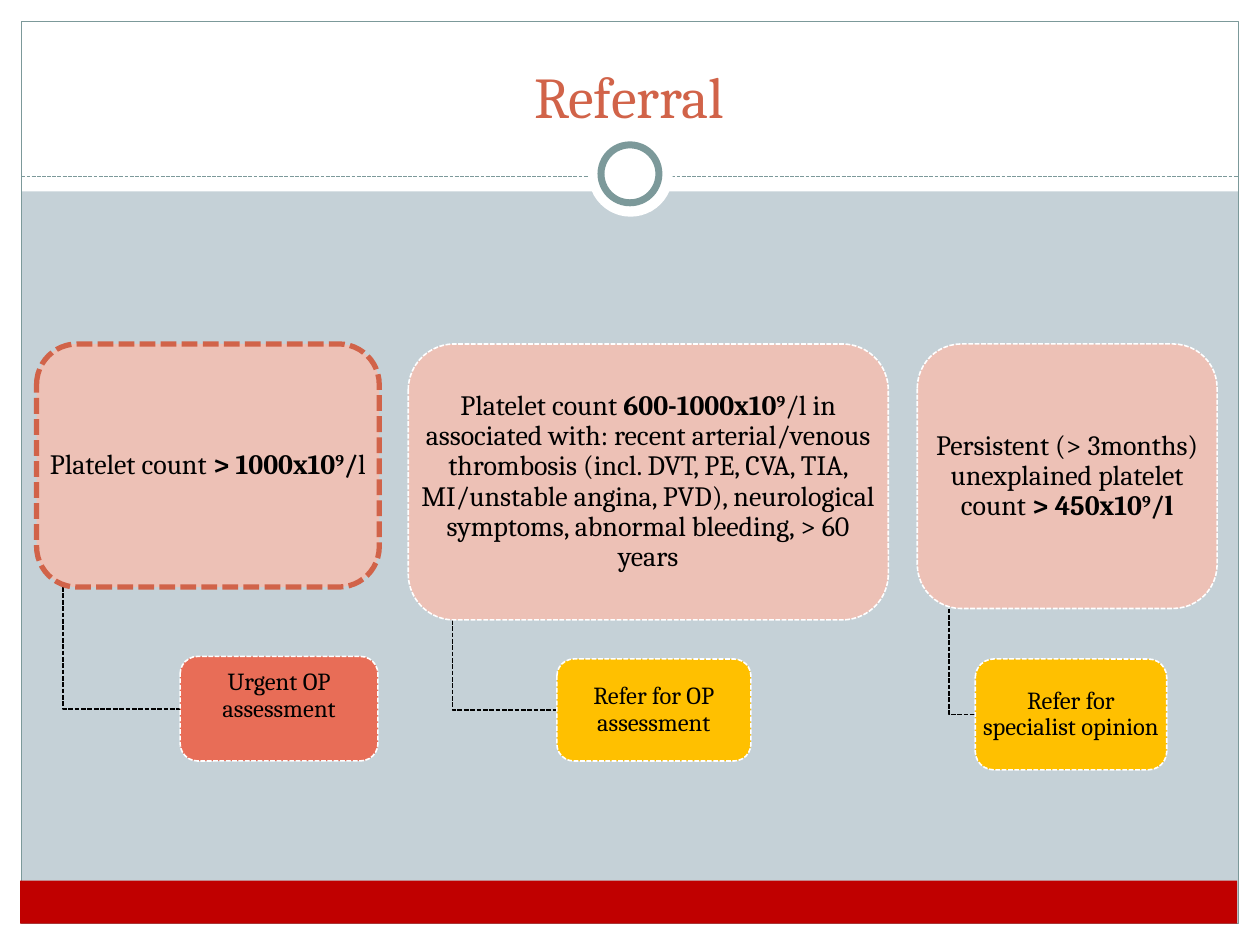
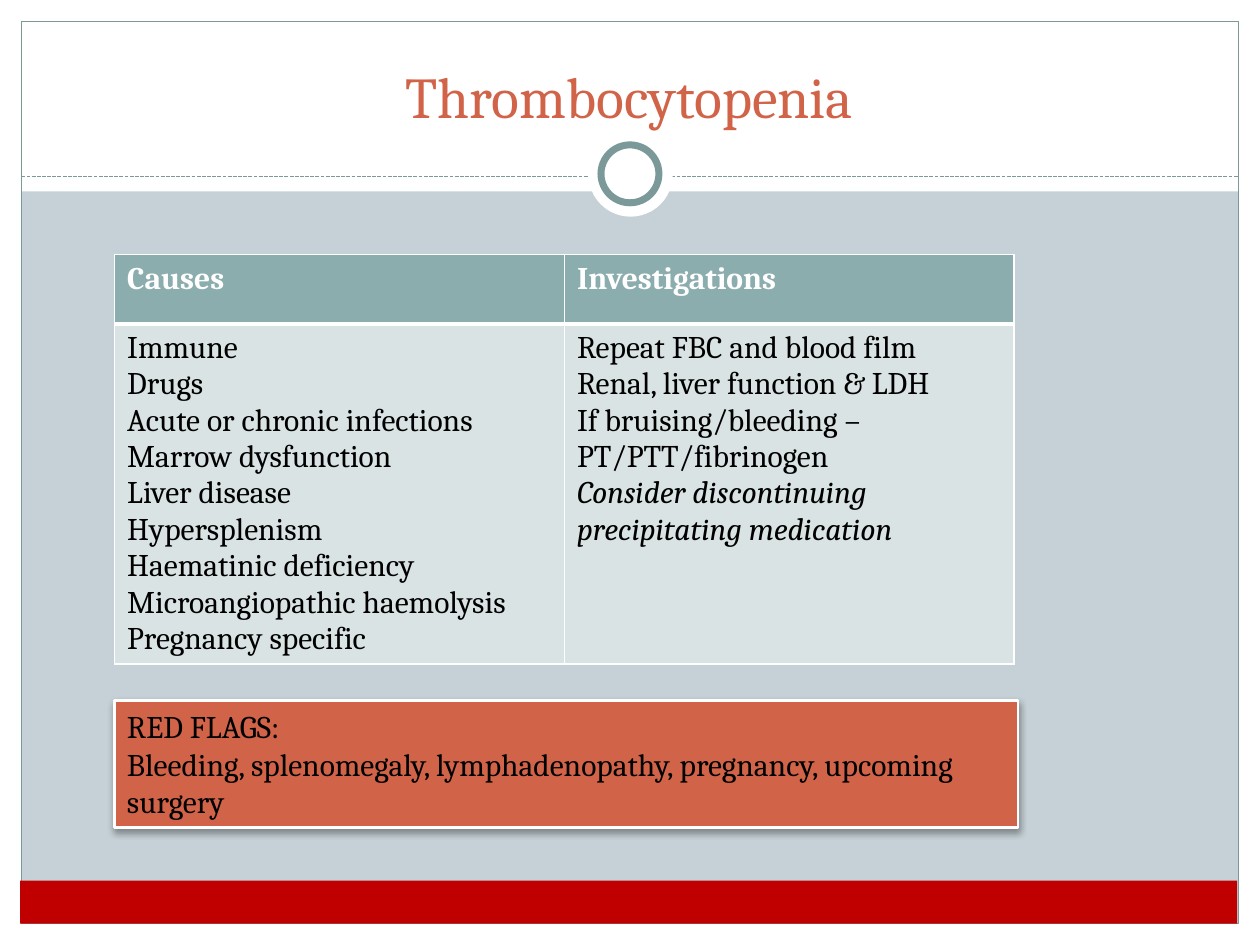
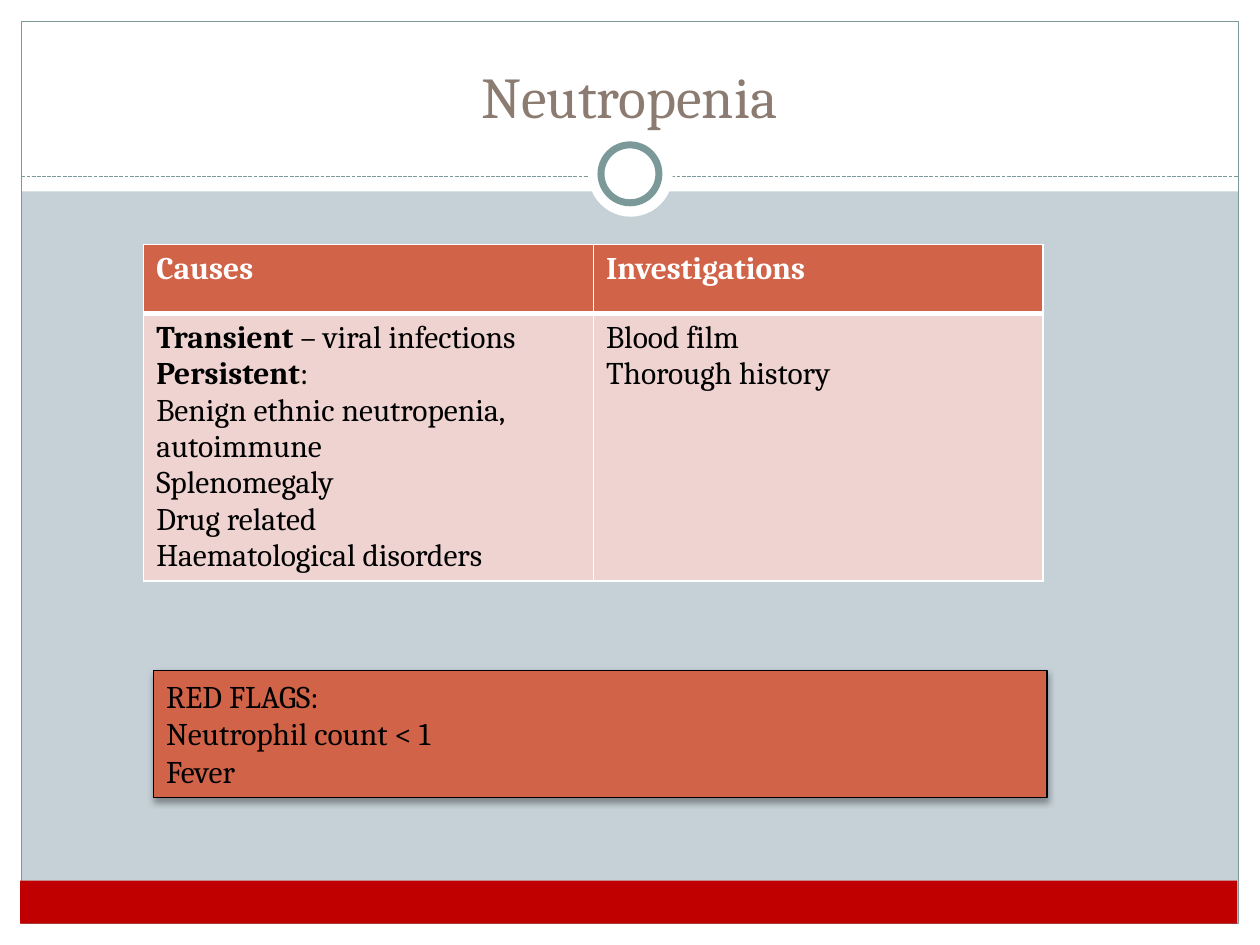
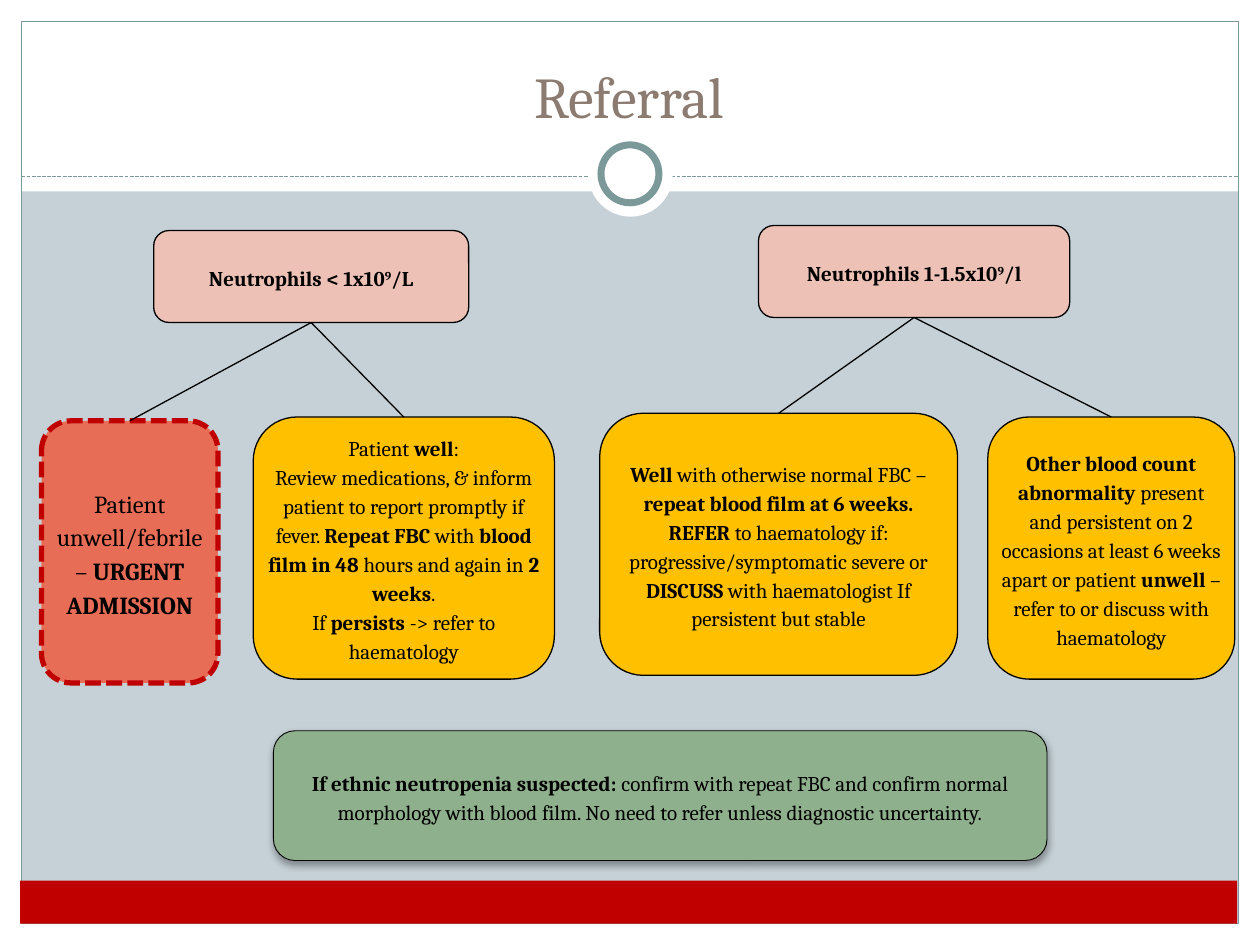
from lxml import etree
from pptx import Presentation
from pptx.dml.color import RGBColor
from pptx.enum import dml, shapes, text
from pptx.oxml import ns
from pptx.util import Inches, Pt

FONT = "Cambria"
WHITE = RGBColor(0xFF, 0xFF, 0xFF)
BLACK = RGBColor(0, 0, 0)
BACKDROP = RGBColor(0xC5, 0xD1, 0xD7)
TEAL = RGBColor(0x7C, 0x99, 0x9A)
FOOTER_RED = RGBColor(0xC0, 0, 0)
ORANGE = RGBColor(0xD1, 0x63, 0x49)
BROWN = RGBColor(0x8C, 0x7B, 0x70)
PINK = RGBColor(0xED, 0xC1, 0xB6)
CORAL = RGBColor(0xE8, 0x6D, 0x57)
AMBER = RGBColor(0xFF, 0xC0, 0)
GREEN = RGBColor(0x8F, 0xB0, 0x8C)
TABLE_TEAL = RGBColor(0x8C, 0xAD, 0xAE)
PALE_TEAL = RGBColor(0xDA, 0xE3, 0xE3)
PALE_PINK = RGBColor(0xEE, 0xD3, 0xD0)

RECT = shapes.MSO_SHAPE.RECTANGLE
ROUNDED = shapes.MSO_SHAPE.ROUNDED_RECTANGLE
OVAL = shapes.MSO_SHAPE.OVAL
LEFT = text.PP_ALIGN.LEFT
CENTER = text.PP_ALIGN.CENTER
TOP = text.MSO_ANCHOR.TOP
MIDDLE = text.MSO_ANCHOR.MIDDLE
BOTTOM = text.MSO_ANCHOR.BOTTOM


def add_span(para, content, size, color, bold=False, italic=False, raised=False):
    span = para.add_run()
    span.text = content
    font = span.font
    font.name, font.size, font.bold, font.italic = FONT, Pt(size), bold, italic
    font.color.rgb = color
    if raised:
        font._element.set("baseline", "30000")


def write(frame, content, size=12, color=BLACK, bold=False, align=CENTER, anchor=MIDDLE,
          inset=None, line_spacing=None, after=None):
    """Fill a frame with a list of paragraphs.

    *stars* make bold, ~tildes~ make italic, ^carets^ raise, \\n breaks a line.
    """
    frame.word_wrap = True
    frame.vertical_anchor = anchor
    if inset is not None:
        frame.margin_left = frame.margin_right = Inches(inset)
        frame.margin_top = frame.margin_bottom = Inches(inset)
    for index, line in enumerate(content):
        para = frame.add_paragraph() if index else frame.paragraphs[0]
        para.alignment = align
        if line_spacing:
            para.line_spacing = line_spacing
        if after:
            para.space_after = Pt(after)
        style = {"*": bold, "~": False, "^": False}
        piece = ""
        for mark in line + "\0":
            if mark not in "*~^\n\0":
                piece += mark
                continue
            if piece:
                add_span(para, piece, size, color, style["*"], style["~"], style["^"])
            piece = ""
            if mark == "\n":
                para.add_line_break()
            elif mark in style:
                style[mark] = not style[mark]


def set_line(line, color, width, dashed=False):
    line.color.rgb = color
    line.width = Pt(width)
    if dashed:
        line.dash_style = dml.MSO_LINE.SQUARE_DOT


def add_box(slide, kind, at, fill=None, line=None, width=0.75, dashed=False, shadow=False):
    box = slide.shapes.add_shape(kind, *map(Inches, at))
    box.shadow.inherit = False
    if fill is None:
        box.fill.background()
    else:
        box.fill.solid()
        box.fill.fore_color.rgb = fill
    if line is None:
        box.line.fill.background()
    else:
        set_line(box.line, line, width, dashed)
    if shadow:
        effects = box._element.spPr.find(ns.qn("a:effectLst"))
        outer = etree.SubElement(effects, ns.qn("a:outerShdw"), blurRad=str(Pt(4)),
                                 dist=str(Pt(2)), dir="5400000", rotWithShape="0")
        tone = etree.SubElement(outer, ns.qn("a:srgbClr"), val=str(BLACK))
        etree.SubElement(tone, ns.qn("a:alpha"), val="35000")
    return box


def add_line(slide, start=(0, 0), end=(0, 0), color=BLACK, dashed=False):
    line = slide.shapes.add_connector(shapes.MSO_CONNECTOR.STRAIGHT, *map(Inches, start + end))
    set_line(line.line, color, 0.75, dashed)
    etree.SubElement(line._element.spPr, ns.qn("a:effectLst"))
    return line


def join(slide, parent, child):
    """Tie the bottom of the parent box to the top of the child box."""
    line = add_line(slide)
    line.begin_connect(parent, 2)
    line.end_connect(child, 0)


def add_elbow(slide, stem, parent_at, child_at):
    """Dashed line down from the parent box, then right to the child box."""
    top = parent_at[1] + parent_at[3]
    middle = child_at[1] + child_at[3] / 2
    builder = slide.shapes.build_freeform(Inches(stem), Inches(top))
    builder.add_line_segments([(Inches(stem), Inches(middle)),
                               (Inches(child_at[0]), Inches(middle))], close=False)
    elbow = builder.convert_to_shape()
    elbow.shadow.inherit = False
    elbow.fill.background()
    set_line(elbow.line, BLACK, 0.9, dashed=True)


def add_labelled_box(slide, at, content, fill, size, line=WHITE, width=0.9, lift=0):
    """Dashed rounded box with a label laid over it, raised by lift."""
    add_box(slide, ROUNDED, at, fill, line, width, dashed=True)
    left, top, wide, high = at
    pad_x, pad_y = 0.04, 0.05 * high
    label = slide.shapes.add_textbox(Inches(left + pad_x), Inches(top + pad_y - lift),
                                     Inches(wide - 2 * pad_x), Inches(high - 2 * pad_y))
    write(label.text_frame, [content], size, inset=0.01, line_spacing=0.9)


def add_step(slide, at, content, fill, size=12, after=10, **outline):
    box = add_box(slide, ROUNDED, at, fill, **{"line": BLACK, **outline})
    write(box.text_frame, [content], size, inset=0, line_spacing=1.15, after=after)
    return box


def add_red_flags(slide, at, content, **outline):
    box = add_box(slide, RECT, at, ORANGE, shadow=True, **outline)
    write(box.text_frame, ["RED FLAGS:"] + content, 18, align=LEFT, anchor=TOP)


def set_borders(cell, **widths):
    properties = cell._tc.get_or_add_tcPr()
    for index, side in enumerate("LRTB"):
        edge = etree.Element(ns.qn("a:ln" + side), w=str(Pt(widths.get(side, 1))))
        fill = etree.SubElement(edge, ns.qn("a:solidFill"))
        etree.SubElement(fill, ns.qn("a:srgbClr"), val=str(WHITE))
        properties.insert(index, edge)


def add_cause_table(slide, left, top, body_height, causes, investigations, head_fill, body_fill):
    head_height, column = 0.55, 3.57
    table = slide.shapes.add_table(2, 2, Inches(left), Inches(top), Inches(2 * column),
                                   Inches(head_height + body_height)).table
    table.first_row = table.horz_banding = False
    table.rows[0].height = Inches(head_height)
    table.rows[1].height = Inches(body_height)
    columns = (("Causes", causes), ("Investigations", investigations))
    for index, (heading, entries) in enumerate(columns):
        head, body = table.cell(0, index), table.cell(1, index)
        for cell, fill in ((head, head_fill), (body, body_fill)):
            cell.fill.solid()
            cell.fill.fore_color.rgb = fill
            cell.vertical_anchor = TOP
        write(head.text_frame, [heading], 18, WHITE, bold=True, align=LEFT, anchor=None)
        write(body.text_frame, entries, 18, align=LEFT, anchor=None)
        set_borders(head, B=3)
        set_borders(body, T=3)


def build_layout(deck, layout):
    """Put the shared frame, bands and title place on the layout."""
    layout.background.fill.solid()
    layout.background.fill.fore_color.rgb = BACKDROP
    title = layout.placeholders[0]
    title.left, title.top, title.width, title.height = map(Inches, (0.33, 0.25, 9.33, 0.83))
    # Layouts cannot add shapes, so a slide draws them and hands them over.
    slide = deck.slides.add_slide(layout)
    frame = [add_box(slide, RECT, at, WHITE) for at in (
        (0, 7.33, 10, 0.17), (0, 0, 10, 1.52), (0, 0, 0.17, 7.5), (9.83, 0, 0.17, 7.5))]
    frame += [
        add_box(slide, RECT, (0.17, 0.17, 9.66, 7.16), line=TEAL),
        add_line(slide, (0.17, 1.4), (9.83, 1.4), TEAL, dashed=True),
        add_box(slide, OVAL, (4.67, 1.05, 0.67, 0.67), WHITE),
        add_box(slide, OVAL, (4.77, 1.15, 0.46, 0.46), WHITE, TEAL, 4),
        add_box(slide, RECT, (0.16, 6.99, 9.66, 0.34), FOOTER_RED),
    ]
    for index, part in enumerate(frame):
        layout.shapes.element.insert(2 + index, part.element)
    return slide


def set_title(slide, content, color):
    write(slide.shapes.title.text_frame, [content], 33, color, anchor=BOTTOM)
    slide.shapes.title.text_frame.auto_size = text.MSO_AUTO_SIZE.NONE


def fill_platelet_referral(slide):
    set_title(slide, "Referral", ORANGE)
    over_1000, over_600, over_450 = (
        (0.29, 2.73, 2.72, 1.93), (3.24, 2.73, 3.81, 2.19), (7.28, 2.73, 2.38, 2.1))
    urgent, outpatient, specialist = (
        (1.43, 5.21, 1.57, 0.83), (4.42, 5.23, 1.54, 0.81), (7.74, 5.23, 1.52, 0.88))
    add_elbow(slide, 7.53, over_450, specialist)
    add_elbow(slide, 3.59, over_600, outpatient)
    add_elbow(slide, 0.5, over_1000, urgent)
    add_labelled_box(slide, over_1000, "Platelet count *> 1000x10^9^/*l", PINK, 16,
                     line=ORANGE, width=3)
    add_labelled_box(slide, urgent, "Urgent OP assessment", CORAL, 14, lift=0.1)
    add_labelled_box(
        slide, over_600,
        "Platelet count* 600-1000x10^9^*/l in associated with: recent arterial/venous "
        "thrombosis (incl. DVT, PE, CVA, TIA, MI/unstable angina, PVD), neurological "
        "symptoms, abnormal bleeding, > 60 years", PINK, 16)
    add_labelled_box(slide, outpatient, "Refer for OP assessment", AMBER, 14)
    add_labelled_box(
        slide, over_450,
        "Persistent (> 3months) unexplained platelet count *> 450x10^9^/l*", PINK, 16)
    add_labelled_box(slide, specialist, "Refer for specialist opinion", AMBER, 14)


def fill_thrombocytopenia(slide):
    set_title(slide, "Thrombocytopenia", ORANGE)
    causes = ["Immune", "Drugs", "Acute or chronic infections", "Marrow dysfunction",
              "Liver disease", "Hypersplenism", "Haematinic deficiency",
              "Microangiopathic haemolysis", "Pregnancy specific"]
    investigations = ["Repeat FBC and blood film", "Renal, liver function & LDH",
                      "If bruising/bleeding – PT/PTT/fibrinogen",
                      "~Consider discontinuing precipitating medication~"]
    add_cause_table(slide, 0.91, 2.02, 2.7, causes, investigations, TABLE_TEAL, PALE_TEAL)
    add_red_flags(slide, (0.91, 5.56, 7.17, 1.01),
                  ["Bleeding, splenomegaly, lymphadenopathy, pregnancy, upcoming surgery"],
                  line=WHITE, width=1.57)


def fill_neutropenia(slide):
    set_title(slide, "Neutropenia", BROWN)
    causes = ["*Transient* – viral infections", "*Persistent*:",
              "Benign ethnic neutropenia, autoimmune", "Splenomegaly", "Drug related",
              "Haematological disorders"]
    add_cause_table(slide, 1.14, 1.94, 2.12, causes, ["Blood film", "Thorough history"],
                    ORANGE, PALE_PINK)
    add_red_flags(slide, (1.22, 5.32, 7.09, 1.01), ["Neutrophil count < 1", "Fever"], line=BLACK)


def fill_neutrophil_referral(slide):
    set_title(slide, "Referral", BROWN)
    below_1 = add_step(slide, (1.22, 1.83, 2.5, 0.73), "*Neutrophils < 1x10^9^/L*", PINK)
    below_1_5 = add_step(slide, (6.02, 1.79, 2.47, 0.73), "*Neutrophils 1-1.5x10^9^/l*", PINK)
    unwell = add_step(slide, (0.33, 3.34, 1.4, 2.08),
                      "Patient unwell/febrile – *URGENT ADMISSION*", CORAL, 14,
                      line=FOOTER_RED, width=3, dashed=True)
    well = add_step(
        slide, (2.01, 3.31, 2.39, 2.08),
        "Patient *well*:\nReview medications, & inform patient to report promptly if fever. "
        "*Repeat FBC* with *blood film in 48* hours and again in *2 weeks*.\n"
        "If *persists* -> refer to haematology", AMBER)
    normal_count = add_step(
        slide, (4.76, 3.28, 2.84, 2.08),
        "*Well* with otherwise normal FBC – *repeat blood film at 6 weeks.\nREFER* to "
        "haematology if: progressive/symptomatic severe or *DISCUSS *with haematologist "
        "If persistent but stable", AMBER)
    abnormal_count = add_step(
        slide, (7.84, 3.31, 1.96, 2.08),
        "*Other blood count abnormality* present and persistent on 2 occasions at least "
        "6 weeks apart or patient *unwell* – refer to or discuss with haematology", AMBER)
    add_step(slide, (2.17, 5.8, 6.14, 1.03),
             "*If ethnic neutropenia suspected: *confirm with repeat FBC and confirm normal "
             "morphology with blood film. No need to refer unless diagnostic uncertainty.",
             GREEN, after=None, width=0.5, shadow=True)
    for parent, children in ((below_1, (unwell, well)),
                             (below_1_5, (normal_count, abnormal_count))):
        for child in children:
            join(slide, parent, child)


def main():
    deck = Presentation()
    deck.slide_width, deck.slide_height = Inches(10), Inches(7.5)
    title_only = deck.slide_layouts[5]
    fill_platelet_referral(build_layout(deck, title_only))
    for fill_slide in (fill_thrombocytopenia, fill_neutropenia, fill_neutrophil_referral):
        fill_slide(deck.slides.add_slide(title_only))
    deck.save("out.pptx")


if __name__ == "__main__":
    main()
